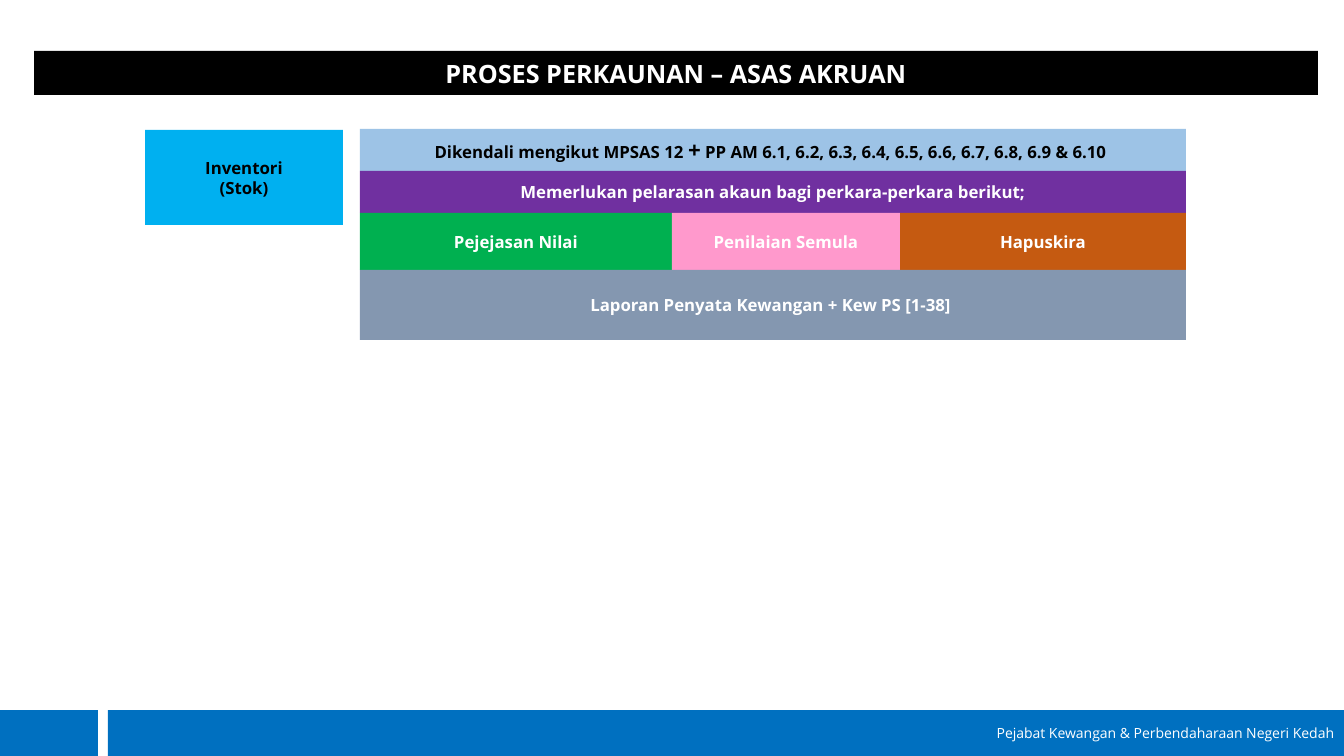
"""Build the accrual accounting slide for inventory."""
from pptx import Presentation, util as u
from pptx.dml.color import RGBColor
from pptx.enum import shapes, text

SCALE = 914400 / 100.8
HUES = {
    "black": "000000", "white": "FFFFFF", "cyan": "00B0F0", "sky": "9DC3E6",
    "purple": "7030A0", "green": "00B050", "pink": "FF99CC",
    "rust": "C55A11", "slate": "8497B0", "blue": "0070C0",
}


def px(n):
    """Turn pixels into EMU."""
    return u.Emu(round(n * SCALE))


class Deck:
    """Hold the style and the current slide."""

    face = "Open Sans"

    def __init__(self, wide, high):
        """Open a blank slide of the given size."""
        self.prs = Presentation()
        self.prs.slide_width, self.prs.slide_height = px(wide), px(high)
        self.slide = self.prs.slides.add_slide(self.prs.slide_layouts[6])

    def box(self, area, fill, lines=(), ink="white", size=12, bold=True, align="CENTER"):
        """Add a filled box; a line is a string or a list of (words, size)."""
        shape = self.slide.shapes.add_shape(
            shapes.MSO_SHAPE.RECTANGLE, *map(px, area))
        shape.shadow.inherit = False
        shape.fill.solid()
        shape.fill.fore_color.rgb = RGBColor.from_string(HUES[fill])
        shape.line.fill.background()
        frame = shape.text_frame
        frame.word_wrap = True
        frame.vertical_anchor = text.MSO_ANCHOR.MIDDLE
        for i, line in enumerate(lines):
            para = frame.add_paragraph() if i else frame.paragraphs[0]
            para.alignment = text.PP_ALIGN[align]
            self.label(para, line, ink, size, bold)

    def label(self, para, line, ink, size, bold):
        """Fill one paragraph with styled words."""
        font = para.font
        font.name, font.size, font.bold = self.face, u.Pt(size), bold
        font.color.rgb = RGBColor.from_string(HUES[ink])
        for words, points in [(line, size)] if isinstance(line, str) else line:
            run = para.add_run()
            run.text = words
            if points != size:
                run.font.size = u.Pt(points)

    def row(self, left, top, high, cells):
        """Set boxes side by side; a cell is width, fill, words."""
        for wide, fill, words in cells:
            self.box((left, top, wide, high), fill, [words])
            left += wide


def main():
    """Draw the slide and save it."""
    deck = Deck(1344, 756)
    deck.box((145, 130, 198, 95), "cyan", ["Inventori", "(Stok)"], ink="black")

    left, wide = 360, 826
    rule = [("Dikendali mengikut MPSAS 12 ", 12), ("+", 16),
            (" PP AM 6.1, 6.2, 6.3, 6.4, 6.5, 6.6, 6.7, 6.8, 6.9 & 6.10 ", 12)]
    deck.box((left, 129, wide, 42), "sky", [rule], ink="black")
    deck.row(left, 171, 42, [
        (wide, "purple", "Memerlukan pelarasan akaun bagi perkara-perkara berikut;")])
    deck.row(left, 213, 57, [
        (312, "green", "Pejejasan Nilai"),
        (228, "pink", "Penilaian Semula"),
        (286, "rust", "Hapuskira")])
    deck.row(left, 270, 70, [
        (wide, "slate", "Laporan Penyata Kewangan + Kew PS [1-38] ")])

    deck.box((34, 51, 1284, 44), "black", ["PROSES PERKAUNAN – ASAS AKRUAN"], size=18)
    deck.box((-2, 710, 100, 46), "blue")
    deck.box((108, 710, 1236, 46), "blue",
             ["Pejabat Kewangan & Perbendaharaan Negeri Kedah"],
             size=10, bold=False, align="RIGHT")
    deck.prs.save("out.pptx")


if __name__ == "__main__":
    main()
